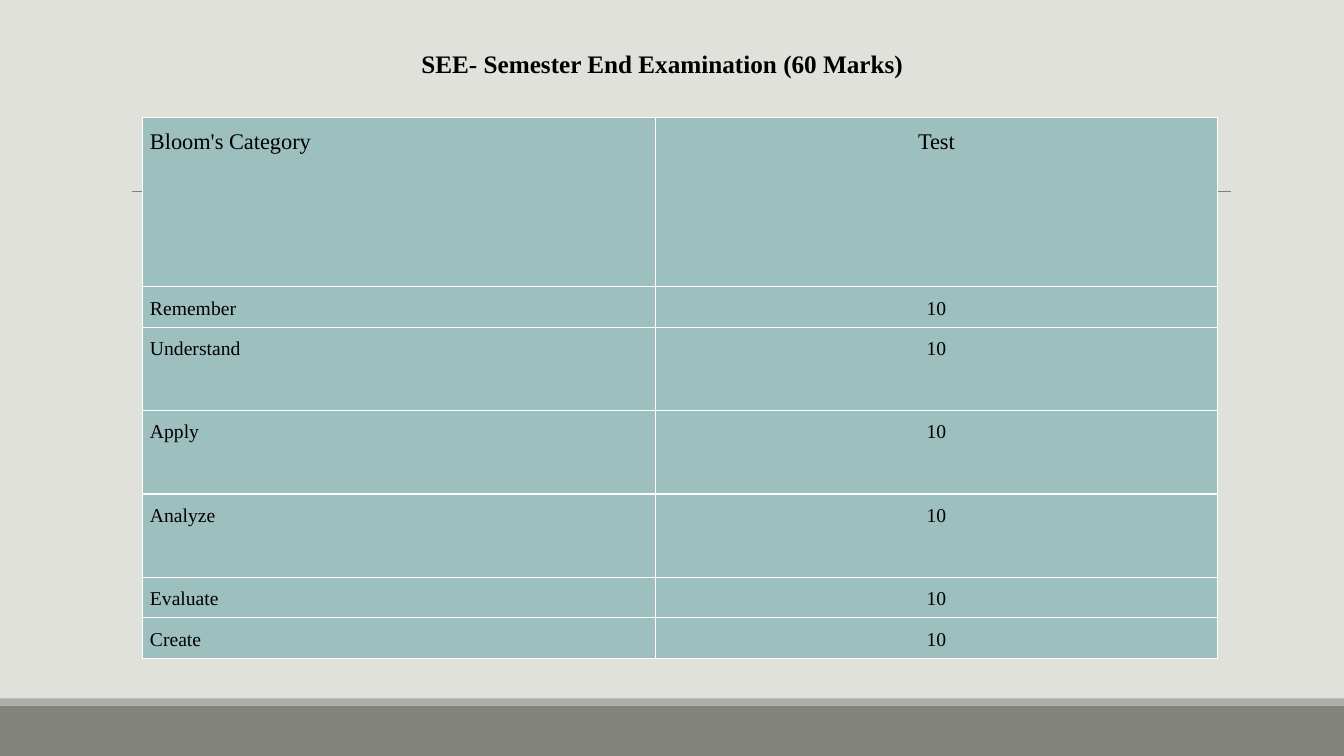
from dataclasses import dataclass

import lxml.etree
import pptx
import pptx.dml.color
import pptx.enum.shapes
import pptx.enum.text
import pptx.oxml.ns
import pptx.util

Cm, Pt = pptx.util.Cm, pptx.util.Pt
ALIGN = pptx.enum.text.PP_ALIGN


@dataclass(frozen=True)
class Theme:
    background: str = "E1E1DB"
    footer: str = "82847C"
    footer_edge: str = "ACADA8"
    rule: str = "808080"
    cell: str = "9DBFBE"
    border: str = "FFFFFF"
    text: str = "000000"
    font: str = "Times New Roman"
    title_size: int = 18
    header_size: int = 16
    body_size: int = 14


THEME = Theme()
WIDTH, HEIGHT = 33.87, 19.05
COLUMN_WIDTHS = (12.91, 14.18)
# Category, marks, row height in cm
ROWS = (
    ("Bloom's Category", "Test", 4.27),
    ("Remember", "10", 1.02),
    ("Understand", "10", 2.1),
    ("Apply", "10", 2.1),
    ("Analyze", "10", 2.1),
    ("Evaluate", "10", 1.02),
    ("Create", "10", 1.02),
)


def color(value):
    return pptx.dml.color.RGBColor.from_string(value)


def paint(fill, value):
    fill.solid()
    fill.fore_color.rgb = color(value)


def style_paragraph(paragraph, size, spacing, alignment=ALIGN.LEFT, bold=False):
    paragraph.alignment = alignment
    paragraph.line_spacing = spacing
    font = paragraph.font
    font.name, font.size, font.bold = THEME.font, Pt(size), bold
    font.color.rgb = color(THEME.text)


def add_band(slide, top, height, fill):
    shape = slide.shapes.add_shape(
        pptx.enum.shapes.MSO_SHAPE.RECTANGLE, 0, Cm(top), Cm(WIDTH), Cm(height))
    shape.shadow.inherit = False
    paint(shape.fill, fill)
    shape.line.fill.background()


def add_rule(slide, left, right, y):
    connector = slide.shapes.add_connector(
        pptx.enum.shapes.MSO_CONNECTOR.STRAIGHT, Cm(left), Cm(y), Cm(right), Cm(y))
    connector.line.color.rgb = color(THEME.rule)
    connector.line.width = Pt(0.5)
    properties = connector._element.spPr
    lxml.etree.SubElement(properties, pptx.oxml.ns.qn("a:effectLst"))


def add_title(slide, text):
    box = slide.shapes.add_textbox(Cm(8.61), Cm(1.07), Cm(15.27), Cm(0.97))
    frame = box.text_frame
    frame.word_wrap = True
    frame.vertical_anchor = pptx.enum.text.MSO_ANCHOR.MIDDLE
    frame.margin_left, frame.margin_right = Cm(2.01), 0
    frame.margin_top, frame.margin_bottom = Cm(0.23), Cm(0.05)
    frame.text = text
    style_paragraph(frame.paragraphs[0], THEME.title_size, 0.9, bold=True)


def set_borders(cell, value, width):
    qn = pptx.oxml.ns.qn
    properties = cell._tc.get_or_add_tcPr()
    for index, side in enumerate(("lnL", "lnR", "lnT", "lnB")):
        line = lxml.etree.Element(qn(f"a:{side}"), w=str(Pt(width)))
        fill = lxml.etree.SubElement(line, qn("a:solidFill"))
        lxml.etree.SubElement(fill, qn("a:srgbClr"), val=value)
        properties.insert(index, line)


def fill_cell(cell, text, size, alignment):
    cell.margin_left = Cm(0.18) if alignment == ALIGN.LEFT else 0
    cell.margin_right = cell.margin_top = cell.margin_bottom = 0
    cell.text = text
    style_paragraph(cell.text_frame.paragraphs[0], size, 1.5, alignment)
    paint(cell.fill, THEME.cell)
    set_borders(cell, THEME.border, 1)


def add_marks_table(slide):
    table = slide.shapes.add_table(
        len(ROWS), len(COLUMN_WIDTHS), Cm(3.6), Cm(2.96),
        Cm(sum(COLUMN_WIDTHS)), Cm(sum(row[2] for row in ROWS))).table
    table.horz_banding = False
    for column, width in zip(table.columns, COLUMN_WIDTHS):
        column.width = Cm(width)
    for index, (category, marks, height) in enumerate(ROWS):
        table.rows[index].height = Cm(height)
        size = THEME.body_size if index else THEME.header_size
        fill_cell(table.cell(index, 0), category, size, ALIGN.LEFT)
        fill_cell(table.cell(index, 1), marks, size, ALIGN.CENTER)


def main():
    presentation = pptx.Presentation()
    presentation.slide_width, presentation.slide_height = Cm(WIDTH), Cm(HEIGHT)
    slide = presentation.slides.add_slide(presentation.slide_layouts[6])

    # Backdrop
    paint(slide.background.fill, THEME.background)
    add_band(slide, 17.78, 1.27, THEME.footer)
    add_band(slide, 17.6, 0.18, THEME.footer_edge)
    add_rule(slide, 3.33, 31.01, 4.83)

    # Content
    add_marks_table(slide)
    add_title(slide, "SEE- Semester End Examination (60 Marks)")

    presentation.save("out.pptx")


if __name__ == "__main__":
    main()
